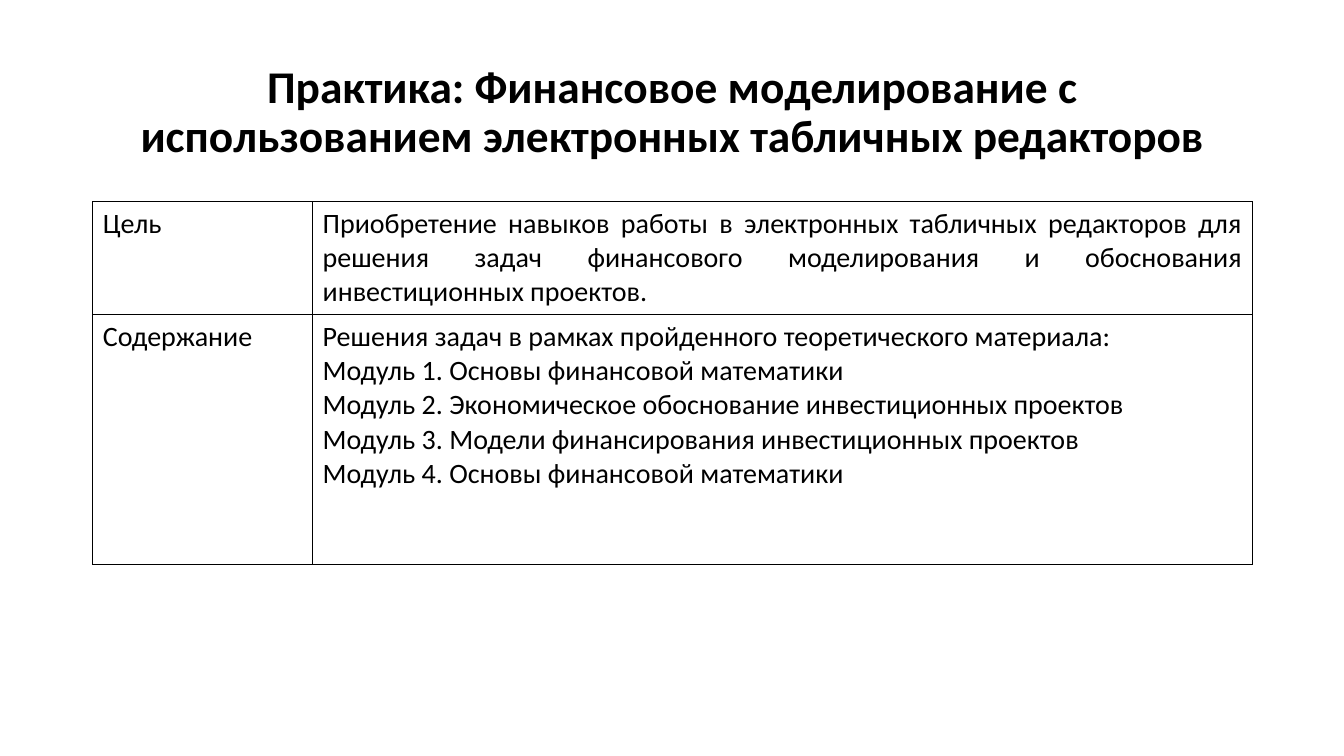
from dataclasses import dataclass

from lxml.etree import SubElement
from pptx import Presentation
from pptx.dml.color import RGBColor
from pptx.enum.text import MSO_ANCHOR, PP_ALIGN
from pptx.oxml.ns import qn
from pptx.util import Inches, Pt


@dataclass(frozen=True)
class Theme:
    font: str = "Calibri"
    ink: str = "000000"
    paper: str = "FFFFFF"
    title_size: float = 32.4
    body_size: float = 20
    border_width: float = 1


TITLE = "Практика: Финансовое моделирование с использованием электронных табличных редакторов"
PRACTICE_ROWS = [
    ("Цель", [
        "Приобретение навыков работы в электронных табличных редакторов для решения "
        "задач финансового моделирования и обоснования инвестиционных проектов.",
    ]),
    ("Содержание", [
        "Решения задач в рамках пройденного теоретического материала:",
        "Модуль 1. Основы финансовой математики",
        "Модуль 2. Экономическое обоснование инвестиционных проектов",
        "Модуль 3. Модели финансирования инвестиционных проектов",
        "Модуль 4. Основы финансовой математики",
    ]),
]


def write_text(frame, lines, *, font, size, color, bold=False,
               align=PP_ALIGN.LEFT, spacing=1.0):
    """Fill a text frame with one paragraph per line."""
    for index, line in enumerate(lines):
        para = frame.paragraphs[0] if index == 0 else frame.add_paragraph()
        para.alignment = align
        para.line_spacing = spacing
        span = para.add_run()
        span.text = line
        span.font.name = font
        span.font.size = Pt(size)
        span.font.bold = bold
        span.font.color.rgb = RGBColor.from_string(color)


class SlideBuilder:
    def __init__(self, deck, theme):
        self.theme = theme
        self.slide = deck.slides.add_slide(deck.slide_layouts[5])
        background = self.slide.background.fill
        background.solid()
        background.fore_color.rgb = RGBColor.from_string(theme.paper)

    def title(self, text, left, top, width, height):
        box = self.slide.shapes.title
        box.left, box.top = Inches(left), Inches(top)
        box.width, box.height = Inches(width), Inches(height)
        frame = box.text_frame
        frame.word_wrap = True
        frame.vertical_anchor = MSO_ANCHOR.MIDDLE
        write_text(frame, [text], font=self.theme.font, size=self.theme.title_size,
                   color=self.theme.ink, bold=True, align=PP_ALIGN.CENTER, spacing=0.9)

    def table(self, rows, left, top, column_widths, row_heights):
        table = self.slide.shapes.add_table(
            len(rows), len(column_widths), Inches(left), Inches(top),
            Inches(sum(column_widths)), Inches(sum(row_heights))).table
        table.first_row = table.horz_banding = False
        for column, width in zip(table.columns, column_widths):
            column.width = Inches(width)
        for row, height, (label, lines) in zip(table.rows, row_heights, rows):
            row.height = Inches(height)
            self.cell(row.cells[0], [label], PP_ALIGN.LEFT)
            self.cell(row.cells[1], lines, PP_ALIGN.JUSTIFY)

    def cell(self, cell, lines, align):
        write_text(cell.text_frame, lines, font=self.theme.font,
                   size=self.theme.body_size, color=self.theme.ink, align=align)
        # Borders come before the fill in the cell properties
        properties = cell._tc.get_or_add_tcPr()
        for side in ("a:lnL", "a:lnR", "a:lnT", "a:lnB"):
            border = SubElement(properties, qn(side), w=str(Pt(self.theme.border_width)))
            fill = SubElement(border, qn("a:solidFill"))
            SubElement(fill, qn("a:srgbClr"), val=self.theme.ink)
        cell.fill.background()


def main():
    deck = Presentation()
    deck.slide_width, deck.slide_height = Inches(13.33), Inches(7.5)
    builder = SlideBuilder(deck, Theme())

    # Heading
    builder.title(TITLE, 0.92, 0.4, 11.5, 1.45)

    # Goal and contents of the practice
    builder.table(PRACTICE_ROWS, 0.92, 2, column_widths=(2.18, 9.32),
                  row_heights=(1.12, 2.48))

    deck.save("out.pptx")


if __name__ == "__main__":
    main()
